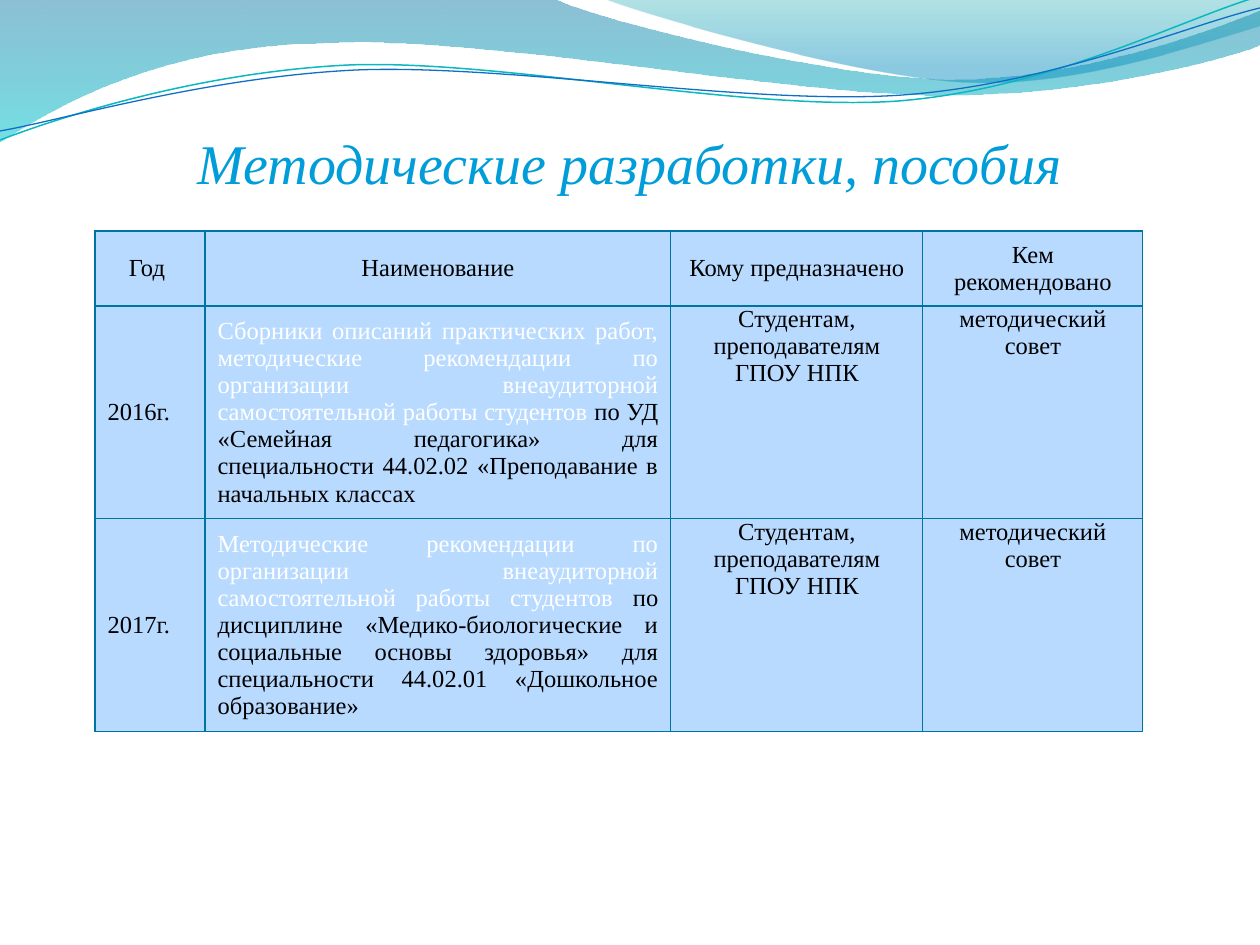
from lxml import etree
from pptx import Presentation
from pptx.dml.color import RGBColor
from pptx.enum.text import MSO_ANCHOR, MSO_AUTO_SIZE, PP_ALIGN
from pptx.oxml.ns import qn
from pptx.util import Pt

LEFT, CENTER, JUSTIFY = PP_ALIGN.LEFT, PP_ALIGN.CENTER, PP_ALIGN.JUSTIFY
TOP, MIDDLE, BOTTOM = MSO_ANCHOR.TOP, MSO_ANCHOR.MIDDLE, MSO_ANCHOR.BOTTOM
NO_FIT = MSO_AUTO_SIZE.NONE

SCALE = 914400 / 126
FONT = "Times New Roman"
BLACK = RGBColor(0x00, 0x00, 0x00)
WHITE = RGBColor(0xFF, 0xFF, 0xFF)
SKY = RGBColor(0x00, 0x9D, 0xD9)
PALE = RGBColor(0xB9, 0xDA, 0xFF)
BLUE = RGBColor(0x00, 0x74, 0xA1)
CYAN = RGBColor(0x00, 0xC6, 0xCF)
TEAL = RGBColor(0x00, 0xA1, 0xA9)
AZURE = RGBColor(0x00, 0x8B, 0xBF)
AQUA = RGBColor(0x0A, 0xB8, 0xBF)
ROYAL = RGBColor(0x0F, 0x6F, 0xC6)

# Each wave: gradient stops (position, colour, opacity %), then path steps.
# A step of one point is a line, a step of three points is a Bezier curve.
WAVES = [
    ([(0, BLUE, 45), (1, CYAN, 55)],
     [[(0, 0)], [(554, -1)],
      [(600, 21), (837, 79), (955, 79)],
      [(1074, 79), (1207, 33), (1260, 11)],
      [(1261, 45)],
      [(1239, 55), (1096, 96), (940, 95)],
      [(784, 95), (481, 35), (324, 43)],
      [(163, 45), (58, 105), (-1, 142)],
      [(0, 0)]]),
    ([(0, TEAL, 30), (0.8, AZURE, 45)],
     [[(604, -1)],
      [(641, 14), (859, 78), (969, 82)],
      [(1079, 87), (1211, 40), (1260, 26)],
      [(1260, 0)], [(604, -1)]]),
]
LINES = [
    (AQUA, 0.85,
     [[(0, 140)],
      [(60, 117), (199, 72), (349, 65)],
      [(498, 59), (747, 112), (898, 101)],
      [(1050, 89), (1182, 19), (1257, -3)]]),
    (ROYAL, 0.75,
     [[(0, 131)],
      [(59, 121), (207, 77), (357, 70)],
      [(508, 64), (752, 106), (903, 95)],
      [(1053, 84), (1185, 26), (1260, 8)]]),
]

COLS = [110, 466, 252, 220]
ROWS = [75, 213, 213]
HEADS = ["Год ", "Наименование", "Кому предназначено", "Кем рекомендовано"]
WORKS = [
    ("2016г.",
     "Сборники описаний практических работ, методические рекомендации по "
     "организации внеаудиторной самостоятельной работы студентов ",
     "по УД «Семейная педагогика» для специальности 44.02.02 "
     "«Преподавание в начальных классах"),
    ("2017г.",
     "Методические рекомендации по организации внеаудиторной "
     "самостоятельной работы студентов ",
     "по дисциплине «Медико-биологические и социальные основы здоровья» "
     "для специальности 44.02.01 «Дошкольное образование» "),
]
READERS = "Студентам, преподавателям ГПОУ НПК"
BOARD = "методический совет"


def px(num):
    return round(num * SCALE)


def put(obj, values):
    for name, value in values.items():
        setattr(obj, name, value)


def bend(shape, steps):
    """Turn the straight segments of three-point steps into curves."""
    segs = list(shape.element.iter(qn("a:lnTo")))
    for seg, step in zip(segs, steps[1:]):
        if len(step) == 1:
            continue
        curve = etree.Element(qn("a:cubicBezTo"))
        for x, y in step:
            etree.SubElement(curve, qn("a:pt"), x=str(px(x) - shape.left),
                             y=str(px(y) - shape.top))
        seg.getparent().replace(seg, curve)


def add_path(slide, steps, close):
    first, *rest = [(px(x), px(y)) for x, y in (step[-1] for step in steps)]
    pen = slide.shapes.build_freeform(*first)
    pen.add_line_segments(rest, close=close)
    shape = pen.convert_to_shape()
    shape.shadow.inherit = False
    bend(shape, steps)
    return shape


def add_wave(slide, stops, steps):
    shape = add_path(slide, steps, True)
    shape.line.fill.background()
    shape.fill.gradient()
    shape.fill.gradient_angle = 270
    for stop, (place, color, _) in zip(shape.fill.gradient_stops, stops):
        stop.position = place
        stop.color.rgb = color
    marks = shape.element.iter(qn("a:srgbClr"))
    for mark, (_, _, alpha) in zip(marks, stops):
        etree.SubElement(mark, qn("a:alpha"), val=str(alpha * 1000))


def add_line(slide, color, width, steps):
    shape = add_path(slide, steps, False)
    shape.fill.background()
    shape.line.color.rgb = color
    shape.line.width = Pt(width)


def write(para, runs, align, size, italic=False):
    para.alignment = align
    for text, color in runs:
        run = para.add_run()
        run.text = text
        put(run.font, {"name": FONT, "size": Pt(size), "italic": italic,
                       "bold": False})
        run.font.color.rgb = color


def add_title(slide, text):
    title = slide.shapes.title
    put(title, {"left": px(63), "top": px(63),
                "width": px(1134), "height": px(133)})
    frame = title.text_frame
    put(frame, {"margin_left": 0, "margin_right": 0, "margin_top": px(6),
                "margin_bottom": 0, "vertical_anchor": BOTTOM,
                "word_wrap": True, "auto_size": NO_FIT})
    write(frame.paragraphs[0], [(text, SKY)], CENTER, 32, True)


def add_edges(cell):
    props = cell._tc.get_or_add_tcPr()
    for side in ("lnL", "lnR", "lnT", "lnB"):
        edge = etree.SubElement(props, qn("a:" + side), w=str(Pt(0.75)))
        fill = etree.SubElement(edge, qn("a:solidFill"))
        etree.SubElement(fill, qn("a:srgbClr"), val=str(BLUE))


def fill_cell(cell, runs, align, anchor):
    add_edges(cell)
    cell.fill.solid()
    cell.fill.fore_color.rgb = PALE
    cell.vertical_anchor = anchor
    if anchor == TOP:
        put(cell, {"margin_left": px(9), "margin_right": px(9),
                   "margin_top": 0, "margin_bottom": 0})
    write(cell.text_frame.paragraphs[0], runs, align, 14)


def add_grid(slide):
    frame = slide.shapes.add_table(len(ROWS), len(COLS), px(95), px(231),
                                   px(sum(COLS)), px(sum(ROWS)))
    table = frame.table
    put(table, {"first_row": False, "horz_banding": False})
    for col, width in zip(table.columns, COLS):
        col.width = px(width)
    for row, height in zip(table.rows, ROWS):
        row.height = px(height)
    rows = [[([(head, BLACK)], CENTER, MIDDLE) for head in HEADS]]
    for year, kind, topic in WORKS:
        rows.append([([(year, BLACK)], LEFT, MIDDLE),
                     ([(kind, WHITE), (topic, BLACK)], JUSTIFY, MIDDLE),
                     ([(READERS, BLACK)], CENTER, TOP),
                     ([(BOARD, BLACK)], CENTER, TOP)])
    for r, row in enumerate(rows):
        for c, item in enumerate(row):
            fill_cell(table.cell(r, c), *item)


def main():
    deck = Presentation()
    put(deck, {"slide_width": px(1260), "slide_height": px(945)})
    slide = deck.slides.add_slide(deck.slide_layouts[5])
    for wave in WAVES:
        add_wave(slide, *wave)
    for line in LINES:
        add_line(slide, *line)
    add_title(slide, "Методические разработки, пособия")
    add_grid(slide)
    deck.save("out.pptx")


if __name__ == "__main__":
    main()
